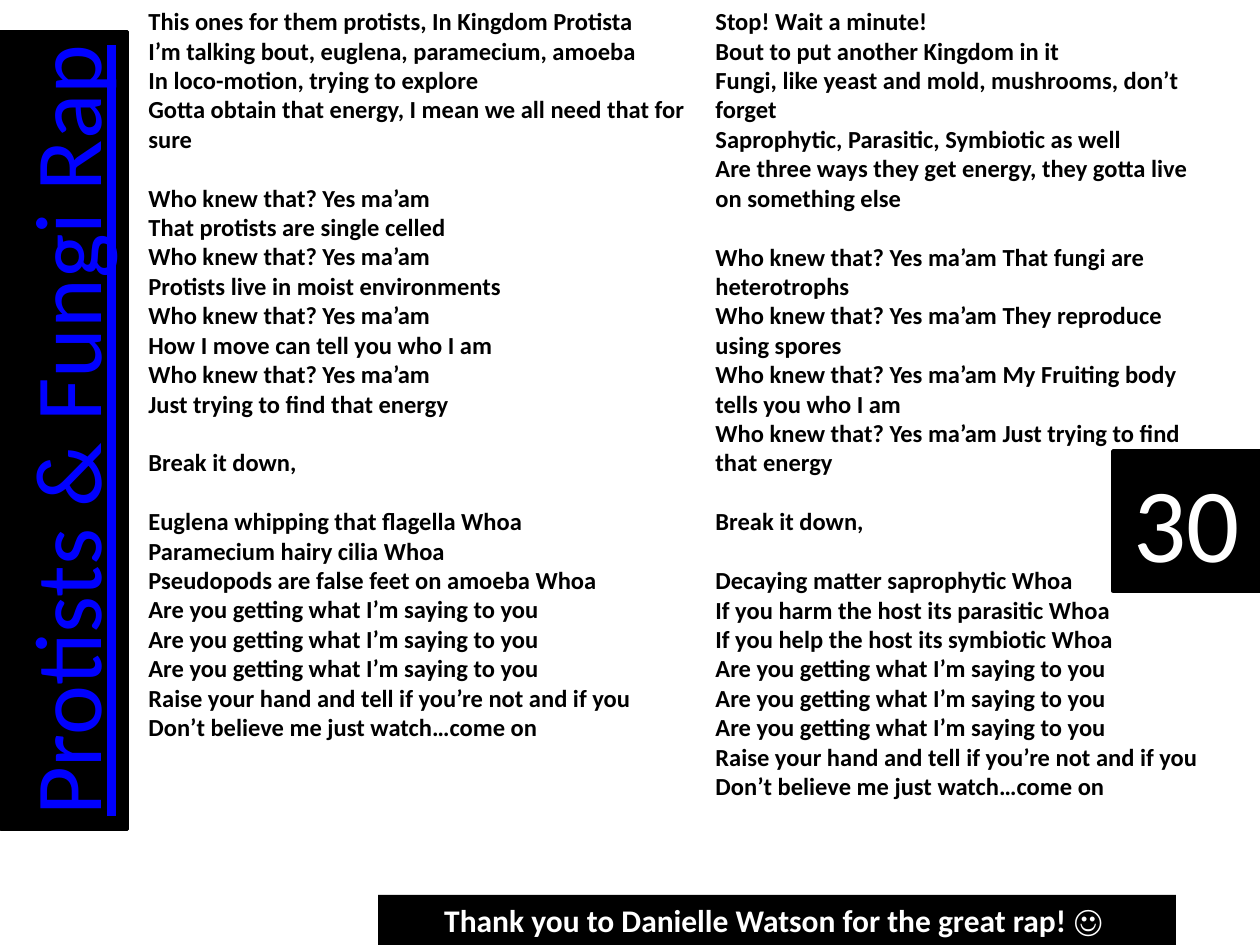
from lxml import etree
from pptx import Presentation
from pptx.dml.color import RGBColor
from pptx.enum.shapes import MSO_SHAPE
from pptx.enum.text import MSO_ANCHOR, MSO_AUTO_SIZE, PP_ALIGN
from pptx.oxml.ns import qn
from pptx.util import Emu, Pt

RECTANGLE = MSO_SHAPE.RECTANGLE
LEFT, CENTER = PP_ALIGN.LEFT, PP_ALIGN.CENTER
TOP, MIDDLE = MSO_ANCHOR.TOP, MSO_ANCHOR.MIDDLE
GROW = MSO_AUTO_SIZE.SHAPE_TO_FIT_TEXT
EMU_PER_PX = 914400 / 126
TITLE_ONLY = 5
STANZA_GAP = 16.8
COLORS = {"black": "000000", "white": "FFFFFF", "link": "0000FF"}

ENDING = ["Are you getting what I’m saying to you"] * 3 + [
    "Raise your hand and tell if you’re not and if you",
    "Don’t believe me just watch…come on",
]
QUESTION = "Who knew that? Yes ma’am"
BREAK = ["Break it down,"]

PROTIST_FACTS = [
    "That protists are single celled",
    "Protists live in moist environments",
    "How I move can tell you who I am",
    "Just trying to find that energy",
]
PROTIST_STANZAS = [
    [
        "This ones for them protists, In Kingdom Protista",
        "I’m talking bout, euglena, paramecium, amoeba",
        "In loco-motion, trying to explore",
        "Gotta obtain that energy, I mean we all need that for sure",
    ],
    [line for fact in PROTIST_FACTS for line in (QUESTION, fact)],
    BREAK,
    [
        "Euglena whipping that flagella Whoa",
        "Paramecium hairy cilia Whoa",
        "Pseudopods are false feet on amoeba Whoa",
    ] + ENDING,
]

FUNGI_FACTS = [
    "That fungi are heterotrophs",
    "They reproduce using spores",
    "My Fruiting body tells you who I am",
    "Just trying to find that energy",
]
FUNGI_STANZAS = [
    [
        "Stop! Wait a minute!",
        "Bout to put another Kingdom in it",
        "Fungi, like yeast and mold, mushrooms, don’t forget",
        "Saprophytic, Parasitic, Symbiotic as well",
        "Are three ways they get energy, they gotta live on something else",
    ],
    [f"{QUESTION} {fact}" for fact in FUNGI_FACTS],
    BREAK,
    [
        "Decaying matter saprophytic Whoa",
        "If you harm the host its parasitic Whoa",
        "If you help the host its symbiotic Whoa",
    ] + ENDING,
]


def px(length):
    return Emu(round(length * EMU_PER_PX))


def rgb(name):
    return RGBColor.from_string(COLORS[name])


class SlideBuilder:
    font = "Calibri"

    def __init__(self, slide):
        self.slide = slide

    def add_text(self, paragraph, text, size, color, bold=False, align=LEFT):
        paragraph.alignment = align
        run = paragraph.add_run()
        run.text = text
        run.font.name = self.font
        run.font.size = Pt(size)
        run.font.bold = bold
        run.font.color.rgb = rgb(color)
        return run

    def frame(self, shape, anchor, wrap=True):
        text_frame = shape.text_frame
        text_frame.word_wrap = wrap
        text_frame.auto_size = GROW
        text_frame.vertical_anchor = anchor
        return text_frame

    def paint(self, shape, outline):
        shape.fill.solid()
        shape.fill.fore_color.rgb = rgb("black")
        if outline:
            shape.line.color.rgb = rgb("black")
            shape.line.width = Pt(outline)
        else:
            shape.line.fill.background()

    def title(self, text, left, top, width, height, size):
        shape = self.slide.shapes.title
        shape.left, shape.top = px(left), px(top)
        shape.width, shape.height = px(width), px(height)
        shape.rotation = 270
        self.paint(shape, 2)
        paragraph = self.frame(shape, MIDDLE, wrap=False).paragraphs[0]
        run = self.add_text(paragraph, text, size, "link", align=CENTER)
        run.font.underline = True
        # Thin white outline around the letters
        outline = etree.Element(qn("a:ln"), w=str(Pt(1.45)))
        fill = etree.SubElement(outline, qn("a:solidFill"))
        etree.SubElement(fill, qn("a:srgbClr"), val=COLORS["white"])
        run._r.get_or_add_rPr().insert(0, outline)

    def label(self, text, left, top, width, height, size, bold=False, outline=0):
        shape = self.slide.shapes.add_shape(
            RECTANGLE, px(left), px(top), px(width), px(height))
        shape.shadow.inherit = False
        self.paint(shape, outline)
        paragraph = self.frame(shape, MIDDLE).paragraphs[0]
        self.add_text(paragraph, text, size, "white", bold, CENTER)

    def lyrics(self, stanzas, left, top, width, height):
        shape = self.slide.shapes.add_textbox(
            px(left), px(top), px(width), px(height))
        text_frame = self.frame(shape, TOP)
        paragraph = text_frame.paragraphs[0]
        for stanza_index, stanza in enumerate(stanzas):
            for line_index, line in enumerate(stanza):
                if stanza_index or line_index:
                    paragraph = text_frame.add_paragraph()
                if stanza_index and not line_index:
                    paragraph.space_before = Pt(STANZA_GAP)
                self.add_text(paragraph, line, 14, "black", bold=True)


def main():
    presentation = Presentation()
    presentation.slide_width, presentation.slide_height = px(1260), px(945)
    layout = presentation.slide_layouts[TITLE_ONLY]
    builder = SlideBuilder(presentation.slides.add_slide(layout))

    # Slide number block
    builder.label("30", 1113, 451, 147, 140, size=60, outline=2)

    # Vertical title and the two verses
    builder.lyrics(PROTIST_STANZAS, 136, 0, 567, 780)
    builder.title("Protists & Fungi Rap", -335, 367, 798, 127, size=54)

    # Credit line
    builder.label("Thank you to Danielle Watson for the great rap! ☺ ",
                  378, 895, 798, 50, size=18, bold=True)
    builder.lyrics(FUNGI_STANZAS, 703, 0, 525, 814)

    presentation.save("out.pptx")


if __name__ == "__main__":
    main()
